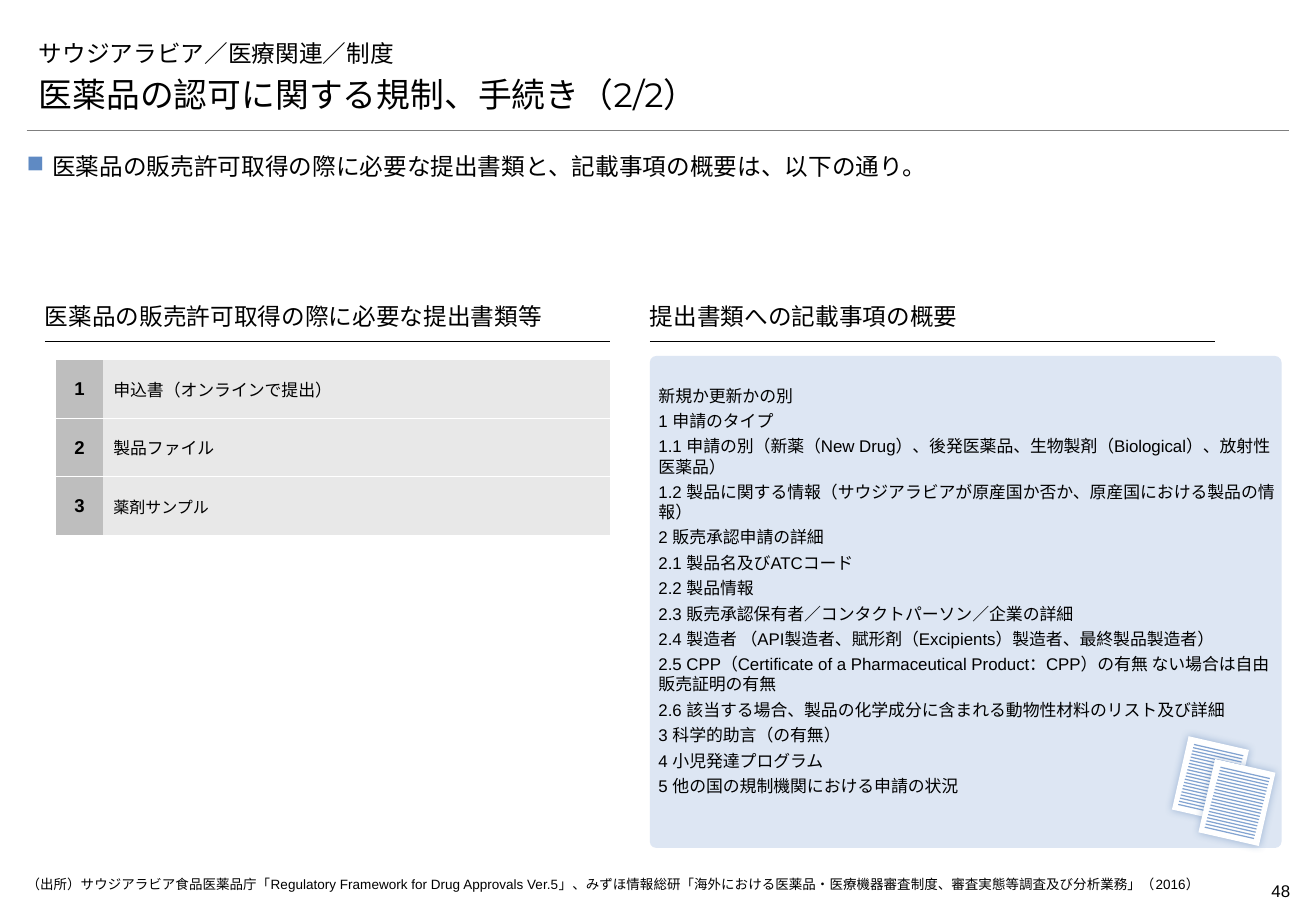
from dataclasses import dataclass, field

from lxml import etree
from pptx import Presentation
from pptx.dml.color import RGBColor
from pptx.enum.shapes import MSO_CONNECTOR, MSO_SHAPE
from pptx.enum.text import MSO_ANCHOR, MSO_AUTO_SIZE, PP_ALIGN
from pptx.oxml.ns import qn
from pptx.util import Pt

STRAIGHT = MSO_CONNECTOR.STRAIGHT
RECT, ROUNDED = MSO_SHAPE.RECTANGLE, MSO_SHAPE.ROUNDED_RECTANGLE
TOP, MIDDLE, BOTTOM = MSO_ANCHOR.TOP, MSO_ANCHOR.MIDDLE, MSO_ANCHOR.BOTTOM
LEFT, CENTER, RIGHT = PP_ALIGN.LEFT, PP_ALIGN.CENTER, PP_ALIGN.RIGHT
JUSTIFY = PP_ALIGN.JUSTIFY
NO_AUTOSIZE = MSO_AUTO_SIZE.NONE

COLORS = {
    "text": "000000", "rule": "7F7F7F", "bullet": "5F8AC3", "white": "FFFFFF",
    "number": "BEBEBE", "document": "E8E8E8", "panel": "DDE6F3",
    "writing": "83A4D1", "shadow": "3D6AA7",
}
HEADING_FONT, TEXT_FONT = "Montserrat", "Arial"
MARGIN = 15.8
CONTENT_W = 748


@dataclass
class Label:
    box: tuple[float, float, float, float]
    lines: list[str]
    size: float
    font: str = TEXT_FONT
    anchor: MSO_ANCHOR = TOP
    align: PP_ALIGN = LEFT
    insets: tuple[float, float, float, float] = (0, 0, 0, 0)
    hanging: float = 0
    bullet: str = ""
    spacing: dict[str, float] = field(default_factory=dict)
    gap: float = 0


@dataclass
class Section:
    x: float
    title: str


@dataclass
class Sheet:
    x: float
    y: float


def rgb(name: str) -> RGBColor:
    return RGBColor.from_string(COLORS[name])


def sub(parent, tag: str, **attrs):
    return etree.SubElement(parent, qn(tag), {k: str(v) for k, v in attrs.items()})


def write(p, text: str, size: float, font: str = TEXT_FONT, bold: bool = False) -> None:
    r = p.add_run()
    r.text = text
    r.font.color.rgb = rgb("text")
    for name, value in {"size": Pt(size), "name": font, "bold": bold}.items():
        setattr(r.font, name, value)


def fill_label(sp, label: Label) -> None:
    for name, value in zip(("left", "top", "width", "height"), label.box):
        setattr(sp, name, Pt(value))
    tf = sp.text_frame
    frame = {"word_wrap": True, "auto_size": NO_AUTOSIZE, "vertical_anchor": label.anchor}
    for name, value in frame.items():
        setattr(tf, name, value)
    for side, value in zip(("left", "top", "right", "bottom"), label.insets):
        setattr(tf, f"margin_{side}", Pt(value))
    for i, line in enumerate(label.lines):
        p = tf.add_paragraph() if i else tf.paragraphs[0]
        p.alignment = label.align
        p.space_before = Pt(label.gap if i else 0)
        for name, value in label.spacing.items():
            setattr(p, name, value)
        pPr = p._p.get_or_add_pPr()
        pPr.set("marL", str(Pt(label.hanging)))
        pPr.set("indent", str(Pt(-label.hanging)))
        if label.bullet:
            sub(sub(pPr, "a:buClr"), "a:srgbClr", val=COLORS["bullet"])
            sub(pPr, "a:buChar", char=label.bullet)
        else:
            sub(pPr, "a:buNone")
        write(p, line, label.size, label.font)


def add_label(s, label: Label) -> None:
    fill_label(s.shapes.add_textbox(0, 0, Pt(1), Pt(1)), label)


def add_line(s, x1: float, y1: float, x2: float, y2: float, color: str, width: float) -> None:
    line = s.shapes.add_connector(STRAIGHT, Pt(x1), Pt(y1), Pt(x2), Pt(y2))
    line.line.color.rgb = rgb(color)
    line.line.width = Pt(width)
    sub(line._element.spPr, "a:effectLst")


def add_block(s, kind: MSO_SHAPE, x: float, y: float, w: float, h: float, color: str):
    sp = s.shapes.add_shape(kind, Pt(x), Pt(y), Pt(w), Pt(h))
    sp.shadow.inherit = False
    sp.fill.solid()
    sp.fill.fore_color.rgb = rgb(color)
    sp.line.fill.background()
    return sp


def add_section(s, section: Section) -> None:
    add_line(s, section.x, 202.3, section.x + 334.8, 202.3, "text", 0.75)
    add_label(s, Label((section.x, 179.3, 334.8, 22.3), [section.title], 14,
                       HEADING_FONT, BOTTOM, insets=(0, 3.6, 0, 5.8)))


def add_sheet(s, sheet: Sheet) -> None:
    paper = add_block(s, RECT, sheet.x, sheet.y, 36.7, 44.6, "white")
    paper.rotation = 12.8
    glow = sub(paper._element.spPr.find(qn("a:effectLst")), "a:outerShdw",
               blurRad=Pt(5), dist=0, dir=0, algn="ctr", rotWithShape=0)
    sub(sub(glow, "a:srgbClr", val=COLORS["shadow"]), "a:alpha", val=40000)
    for i in range(20):
        x, y = sheet.x + 8.6 - 0.49 * i, sheet.y + 1.4 + 1.87 * i
        add_line(s, x, y, x + 29.2, y + 6.7, "writing", 0.75)


def set_borders(cell, widths: dict[str, float]) -> None:
    tcPr = cell._tc.get_or_add_tcPr()
    for i, (side, width) in enumerate(widths.items()):
        ln = sub(tcPr, f"a:ln{side}", w=Pt(width))
        if width:
            sub(sub(ln, "a:solidFill"), "a:srgbClr", val=COLORS["white"])
        else:
            sub(ln, "a:noFill")
        tcPr.insert(i, ln)


def fill_cell(cell, text: str, size: float, color: str, numbered: bool) -> None:
    side = 0 if numbered else 6
    fmt = {"vertical_anchor": MIDDLE, "margin_left": Pt(side), "margin_right": Pt(side),
           "margin_top": 0, "margin_bottom": 0}
    for name, value in fmt.items():
        setattr(cell, name, value)
    cell.fill.solid()
    cell.fill.fore_color.rgb = rgb(color)
    set_borders(cell, {"L": 0, "R": 0 if numbered else 1.5, "T": 0.75, "B": 0.75})
    p = cell.text_frame.paragraphs[0]
    p.alignment = CENTER if numbered else LEFT
    write(p, text, size, bold=numbered)


def add_documents(s, documents: list[tuple[str, float]]) -> None:
    table = s.shapes.add_table(len(documents), 2, Pt(33.1), Pt(213.1), Pt(329), Pt(104.4)).table
    table.first_row = table.horz_banding = False
    for column, width in zip(table.columns, (28.1, 300.9)):
        column.width = Pt(width)
    for i, (name, size) in enumerate(documents):
        table.rows[i].height = Pt(34.8)
        fill_cell(table.cell(i, 0), str(i + 1), 11, "number", True)
        fill_cell(table.cell(i, 1), name, size, "document", False)


TITLE = Label((MARGIN, 15.1, CONTENT_W, 28.1), ["サウジアラビア／医療関連／制度"], 14,
              HEADING_FONT, BOTTOM, insets=(7.2, 3.6, 7.2, 3.6))
SUBTITLE = Label((MARGIN, 43.2, CONTENT_W, 28.1), ["医薬品の認可に関する規制、手続き（2/2）"], 20,
                 HEADING_FONT, BOTTOM, insets=(7.2, 3.6, 7.2, 3.6))
MESSAGE = Label((MARGIN, 88.6, CONTENT_W, 17.3),
                ["医薬品の販売許可取得の際に必要な提出書類と、記載事項の概要は、以下の通り。"], 14,
                align=JUSTIFY, hanging=15.1, bullet="■",
                spacing={"line_spacing": 1.1, "space_after": Pt(2)})
SOURCE = Label((MARGIN, 519.1, 720, 11.5), [
    "（出所）サウジアラビア食品医薬品庁「Regulatory Framework for Drug Approvals Ver.5」、"
    "みずほ情報総研「海外における医薬品・医療機器審査制度、審査実態等調査及び分析業務」（2016）"],
    8, hanging=26.6)
PAGE = Label((707.8, 518.4, 56.9, 19.4), ["48"], 10, align=RIGHT, insets=(0, 3.6, 0, 3.6))
ENTRIES = Label((373, 211, 391, 257.8), [
    "新規か更新かの別",
    "1 申請のタイプ",
    "1.1 申請の別（新薬（New Drug）、後発医薬品、生物製剤（Biological）、放射性医薬品）",
    "1.2 製品に関する情報（サウジアラビアが原産国か否か、原産国における製品の情報）",
    "2 販売承認申請の詳細",
    "2.1 製品名及びATCコード",
    "2.2 製品情報",
    "2.3 販売承認保有者／コンタクトパーソン／企業の詳細",
    "2.4 製造者 （API製造者、賦形剤（Excipients）製造者、最終製品製造者）",
    "2.5 CPP（Certificate of a Pharmaceutical Product：CPP）の有無 ない場合は自由販売証明の有無",
    "2.6 該当する場合、製品の化学成分に含まれる動物性材料のリスト及び詳細",
    "3 科学的助言（の有無）",
    "4 小児発達プログラム",
    "5 他の国の規制機関における申請の状況",
], 10, insets=(17.3, 17.3, 8.6, 17.3), gap=3)
SECTIONS = [Section(26.6, "医薬品の販売許可取得の際に必要な提出書類等"),
            Section(385.2, "提出書類への記載事項の概要")]
DOCUMENTS = [("申込書（オンラインで提出）", 10), ("製品ファイル", 10), ("薬剤サンプル", 9.5)]
SHEETS = [Sheet(699.1, 439.9), Sheet(714.8, 453.4)]


def main() -> None:
    prs = Presentation()
    prs.slide_width, prs.slide_height = Pt(780), Pt(540)
    s = prs.slides.add_slide(prs.slide_layouts[1])

    # Heading
    fill_label(s.shapes.title, TITLE)
    fill_label(s.placeholders[1], SUBTITLE)
    add_line(s, MARGIN, 77, MARGIN + CONTENT_W, 77, "rule", 0.25)
    add_label(s, MESSAGE)

    # Section headings and required documents
    for section in SECTIONS:
        add_section(s, section)
    add_documents(s, DOCUMENTS)

    # Panel with paper sheets and entries
    panel = add_block(s, ROUNDED, 385.2, 211, 374.4, 291.6, "panel")
    panel.adjustments[0] = 0.013
    for sheet in SHEETS:
        add_sheet(s, sheet)
    add_label(s, ENTRIES)

    # Footer
    for label in (SOURCE, PAGE):
        add_label(s, label)
    prs.save("out.pptx")


if __name__ == "__main__":
    main()
